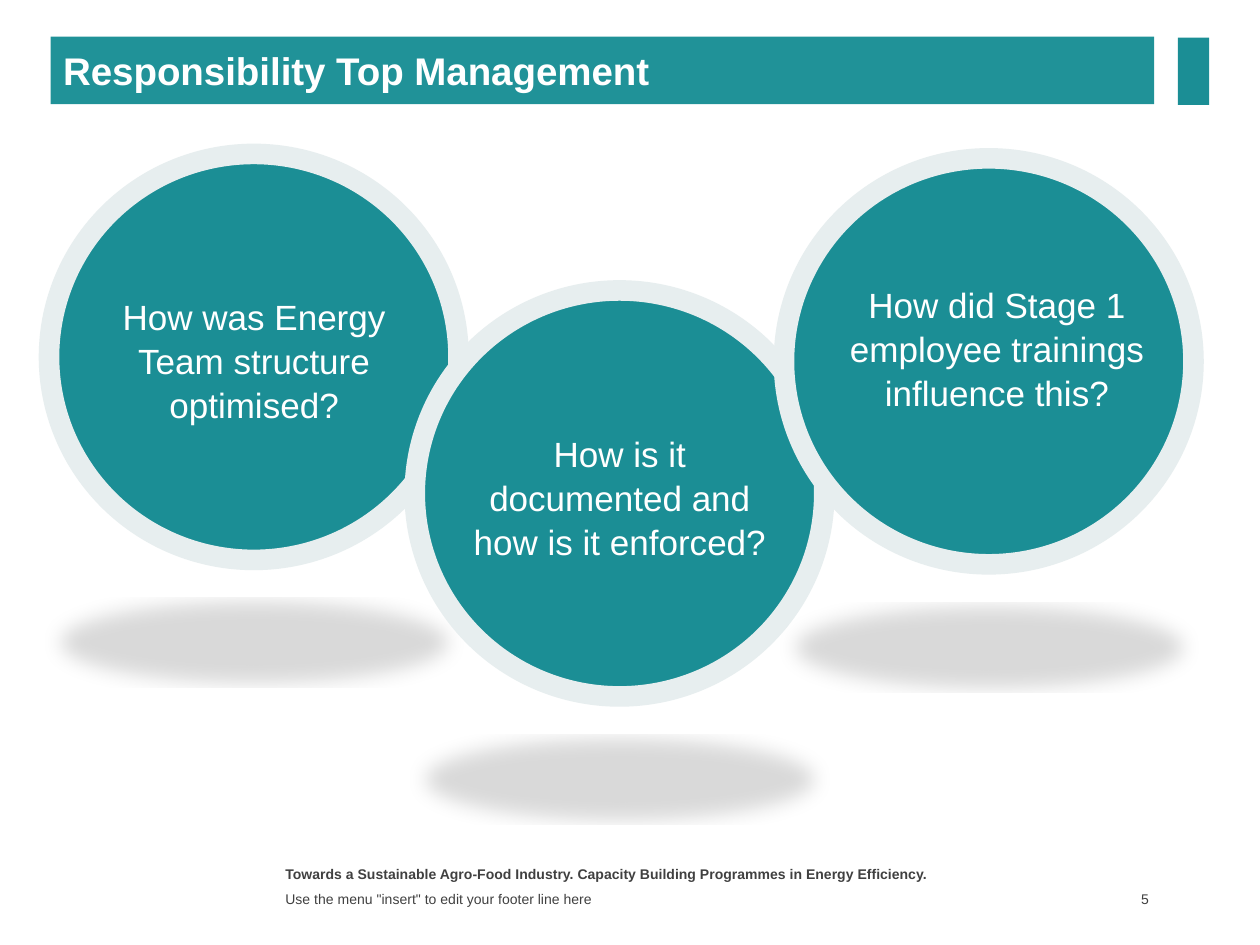
from dataclasses import dataclass

import pptx
import pptx.dml.color
import pptx.enum.shapes
import pptx.enum.text
import pptx.oxml
import pptx.oxml.ns
import pptx.util

Pt = pptx.util.Pt
RGB = pptx.dml.color.RGBColor.from_string
Align = pptx.enum.text.PP_ALIGN
Anchor = pptx.enum.text.MSO_ANCHOR
Shape = pptx.enum.shapes.MSO_SHAPE


@dataclass(frozen=True)
class Theme:
    font: str = "Arial"
    bar: str = "209298"
    teal: str = "1B8E95"
    ring: str = "E7EEEF"
    light: str = "FFFFFF"
    dark: str = "404040"
    title_size: float = 22
    question_size: float = 20
    footer_size: float = 8
    ring_width: float = 11.75


THEME = Theme()

CIRCLE_SIZE = (234, 232)
QUESTION_SIZE = (204.5, 80)

# circle position, question offset from the circle, question
QUESTIONS = [
    ((28, 88), (15, 76), "How was Energy Team structure optimised?"),
    ((237, 166), (15, 76.5), "How is it documented and how is it enforced?"),
    ((448, 90.5), (19.5, 66.5), "How did Stage 1 employee trainings influence this?"),
]

# Shadow cast on the floor: flattened, mirrored and soft
FLOOR_SHADOW = (
    f'<a:effectLst {pptx.oxml.ns.nsdecls("a")}>'
    f'<a:outerShdw blurRad="{Pt(12)}" dist="{Pt(25)}" dir="5400000" '
    'sx="90000" sy="-19000" rotWithShape="0">'
    '<a:srgbClr val="000000"><a:alpha val="15000"/></a:srgbClr>'
    '</a:outerShdw></a:effectLst>'
)


def write(box, text, size, color, bold=False, align=Align.LEFT,
          spacing=1.0, **frame_format):
    """Put one paragraph into a box; frame_format goes to its text frame."""
    frame = box.text_frame
    for name, value in {"word_wrap": True, **frame_format}.items():
        setattr(frame, name, value)
    para = frame.paragraphs[0]
    para.alignment = align
    para.line_spacing = spacing
    span = para.add_run()
    span.text = text
    font_format = {"name": THEME.font, "size": Pt(size), "bold": bold}
    for name, value in font_format.items():
        setattr(span.font, name, value)
    span.font.color.rgb = RGB(color)


def add_filled(shapes, kind, bounds, color):
    shape = shapes.add_shape(kind, *map(Pt, bounds))
    shape.shadow.inherit = False
    shape.fill.solid()
    shape.fill.fore_color.rgb = RGB(color)
    shape.line.fill.background()
    return shape


def add_text(shapes, bounds, text, size, color, **text_format):
    box = shapes.add_textbox(*map(Pt, bounds))
    write(box, text, size, color, **text_format)


def add_title_bar(page):
    bar = add_filled(page.shapes, Shape.RECTANGLE, (29, 21, 630.5, 38.5), THEME.bar)
    write(bar, "Responsibility Top Management", THEME.title_size, THEME.light,
          bold=True, vertical_anchor=Anchor.MIDDLE)
    add_filled(page.shapes, Shape.RECTANGLE, (673, 21.5, 18, 38.5), THEME.teal)


def add_question(page, position, offset, question):
    """Group a ringed circle with its question."""
    group = page.shapes.add_group_shape()
    circle = add_filled(group.shapes, Shape.OVAL, (*position, *CIRCLE_SIZE), THEME.teal)
    circle.line.color.rgb = RGB(THEME.ring)
    circle.line.width = Pt(THEME.ring_width)
    properties = circle.element.spPr
    properties.remove(properties.find(pptx.oxml.ns.qn("a:effectLst")))
    properties.append(pptx.oxml.parse_xml(FLOOR_SHADOW))

    left, top = (start + shift for start, shift in zip(position, offset))
    add_text(group.shapes, (left, top, *QUESTION_SIZE), question,
             THEME.question_size, THEME.light, align=Align.CENTER, spacing=1.05,
             auto_size=pptx.enum.text.MSO_AUTO_SIZE.SHAPE_TO_FIT_TEXT)


def add_footer(page):
    style = (THEME.footer_size, THEME.dark)
    add_text(page.shapes, (156, 491, 396, 15),
             "Towards a Sustainable Agro-Food Industry. "
             "Capacity Building Programmes in Energy Efficiency.",
             *style, bold=True)
    add_text(page.shapes, (156, 507, 396, 13.5),
             'Use the menu "insert" to edit your footer line here',
             *style, vertical_anchor=Anchor.MIDDLE)
    add_text(page.shapes, (619, 506.5, 40.5, 14.5), "5", *style,
             align=Align.RIGHT, vertical_anchor=Anchor.MIDDLE, margin_right=Pt(3))


def main():
    deck = pptx.Presentation()
    deck.slide_width, deck.slide_height = Pt(720), Pt(540)
    page = deck.slides.add_slide(deck.slide_layouts[6])
    add_footer(page)
    add_title_bar(page)
    for position, offset, question in QUESTIONS:
        add_question(page, position, offset, question)
    deck.save("out.pptx")


if __name__ == "__main__":
    main()
